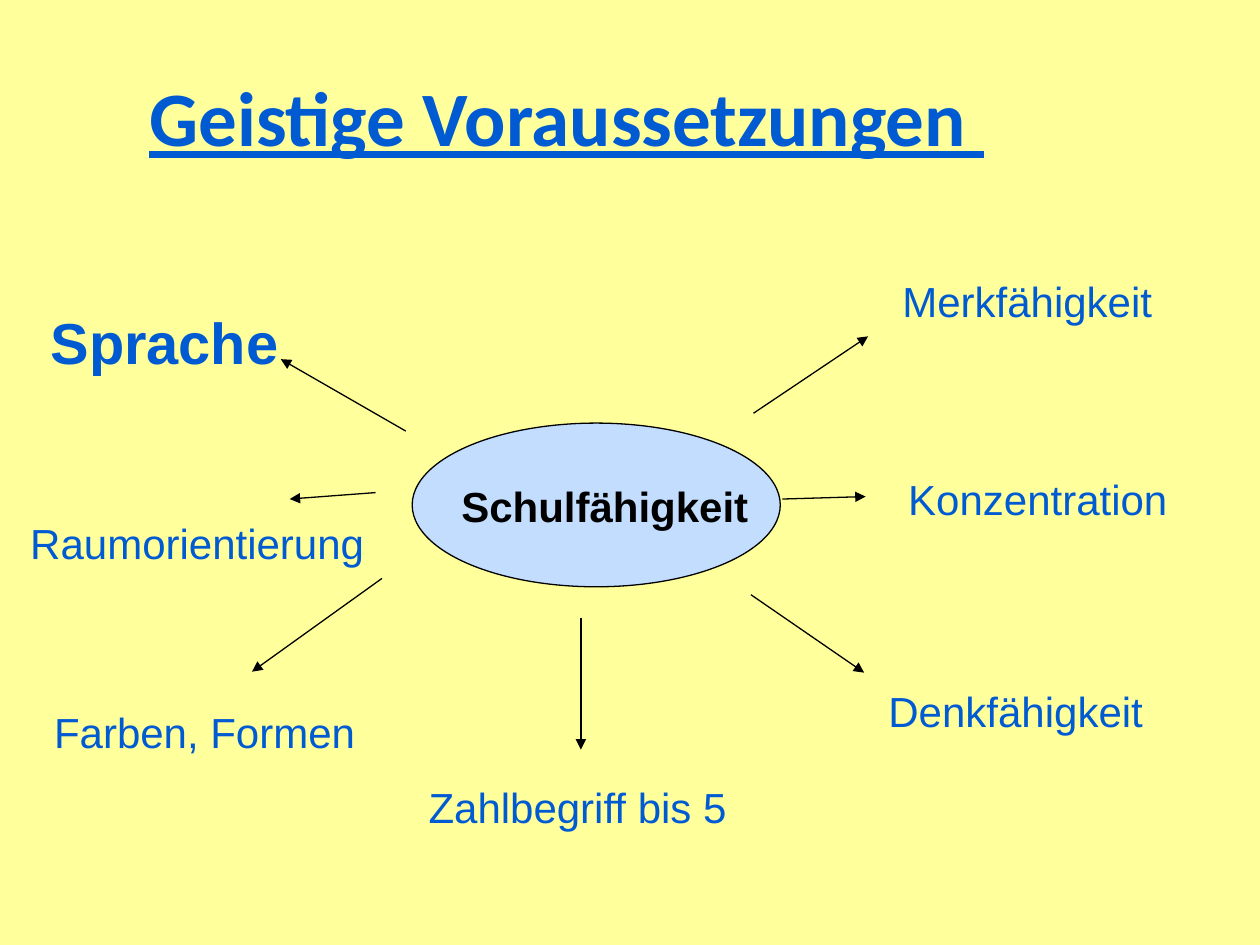
import pptx
import pptx.util
import pptx.dml.color
import pptx.enum.shapes
import pptx.enum.text
import pptx.oxml
import pptx.oxml.ns
from pptx.util import Cm

BLUE = "005BD3"
BLACK = "000000"


def colour(value):
    return pptx.dml.color.RGBColor.from_string(value)


class MindMap:
    font = "Arial"
    size = 24
    line_width = 0.75

    def __init__(self, deck, background):
        self.page = deck.slides.add_slide(deck.slide_layouts[6])
        fill = self.page.background.fill
        fill.solid()
        fill.fore_color.rgb = colour(background)

    def text(self, words, left, top, width, height, size, ink, font, bold):
        box = self.page.shapes.add_textbox(Cm(left), Cm(top), Cm(width), Cm(height))
        frame = box.text_frame
        frame.word_wrap = True
        para = frame.paragraphs[0]
        span = para.add_run()
        span.text = words
        span.font.name = font
        span.font.size = pptx.util.Pt(size)
        span.font.bold = bold
        span.font.color.rgb = colour(ink)
        return frame, para, span

    def title(self, words, left, top, width, height):
        frame, para, span = self.text(words, left, top, width, height, 44, BLUE, "Calibri", True)
        frame.vertical_anchor = pptx.enum.text.MSO_ANCHOR.MIDDLE
        para.alignment = pptx.enum.text.PP_ALIGN.CENTER
        span.font.underline = True

    def label(self, words, left, top, width, height=1.17, size=size, ink=BLUE, bold=False):
        frame, para, span = self.text(words, left, top, width, height, size, ink, self.font, bold)
        frame.margin_left = Cm(0.23)
        frame.margin_right = Cm(0)
        frame.margin_top = Cm(0.18)
        frame.margin_bottom = Cm(0.1)
        para.line_spacing = 0.93

    def outline(self, line):
        line.color.rgb = colour(BLACK)
        line.width = pptx.util.Pt(self.line_width)

    def ellipse(self, left, top, width, height, fill):
        shape = self.page.shapes.add_shape(
            pptx.enum.shapes.MSO_SHAPE.OVAL, Cm(left), Cm(top), Cm(width), Cm(height))
        shape.shadow.inherit = False
        shape.fill.solid()
        shape.fill.fore_color.rgb = colour(fill)
        self.outline(shape.line)

    def arrow(self, *ends):
        connector = self.page.shapes.add_connector(
            pptx.enum.shapes.MSO_CONNECTOR.STRAIGHT, *map(Cm, ends))
        self.outline(connector.line)
        head = pptx.oxml.parse_xml(
            f'<a:tailEnd {pptx.oxml.ns.nsdecls("a")} type="triangle"/>')
        connector.line._get_or_add_ln().append(head)
        connector._element.spPr.append(
            pptx.oxml.parse_xml(f'<a:effectLst {pptx.oxml.ns.nsdecls("a")}/>'))


def main():
    deck = pptx.Presentation()
    deck.slide_width = Cm(25.4)
    deck.slide_height = Cm(19.05)
    mind_map = MindMap(deck, "FFFF9C")
    mind_map.title("Geistige Voraussetzungen ", 0, 0.86, 22.86, 2.95)

    branches = [
        ((15.19, 8.33, 17.5, 6.78), ("Merkfähigkeit", 17.96, 5.46, 6.71)),
        ((15.77, 10.06, 17.45, 10.01), ("Konzentration", 18.08, 9.45, 5.99)),
        ((15.14, 11.99, 17.42, 13.56), ("Denkfähigkeit", 17.68, 13.74, 5.64)),
        ((11.71, 12.45, 11.71, 15.11), ("Zahlbegriff bis 5", 8.41, 15.67, 8.08)),
        ((7.7, 11.66, 5.08, 13.54), ("Farben, Formen", 0.86, 14.15, 6.58)),
        ((7.57, 9.93, 5.84, 10.06), ("Raumorientierung", 0.38, 10.34, 7.62)),
    ]
    for ends, words_and_place in branches:
        mind_map.arrow(*ends)
        mind_map.label(*words_and_place)
    mind_map.arrow(8.18, 8.69, 5.66, 7.24)
    mind_map.label("Sprache", 0.79, 6.12, 5.26, 1.52, size=33, bold=True)

    mind_map.ellipse(8.31, 8.53, 7.42, 3.3, "C3DDFF")
    mind_map.label("Schulfähigkeit", 9.07, 9.6, 6.32, ink=BLACK, bold=True)
    deck.save("out.pptx")


if __name__ == "__main__":
    main()
